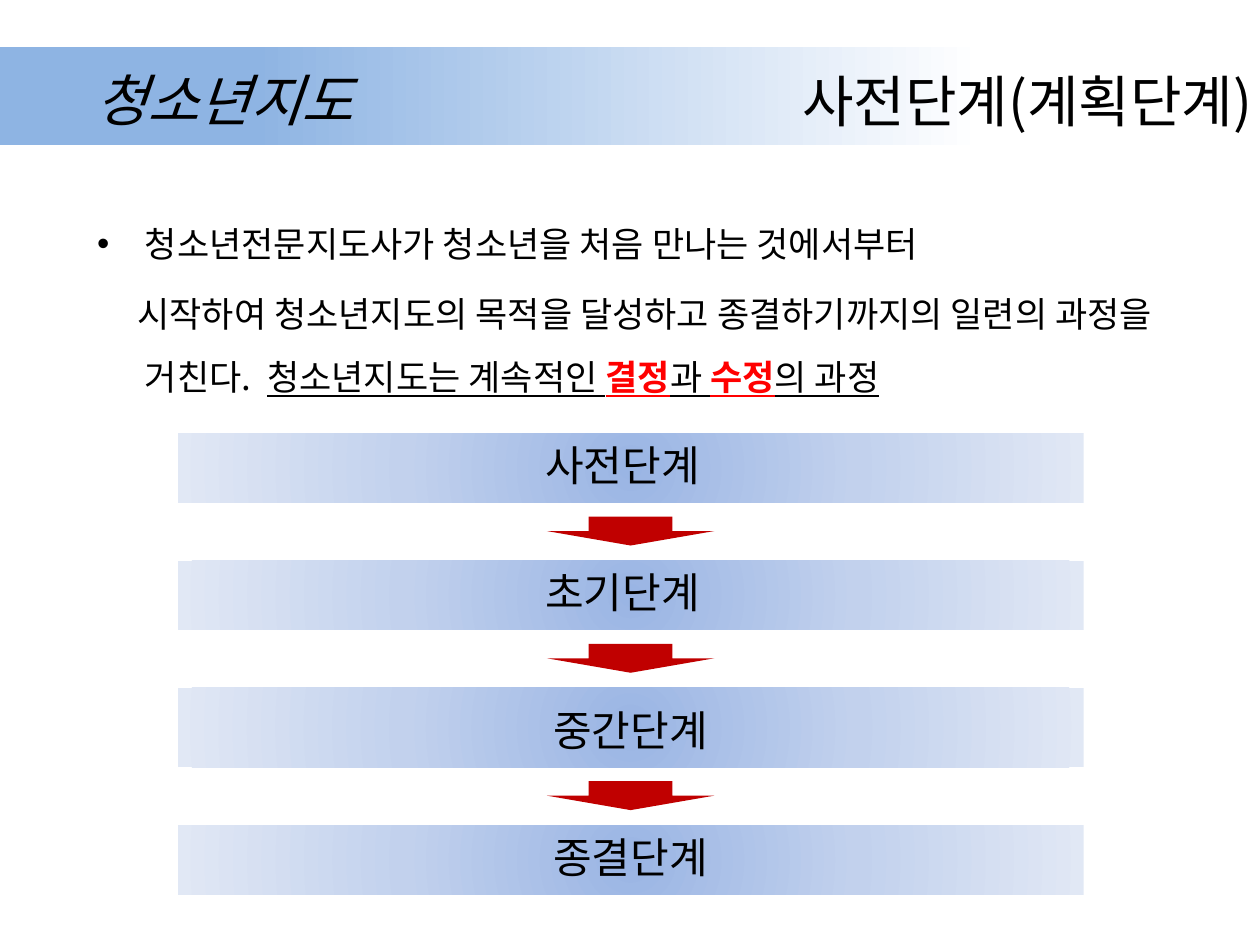
from lxml import etree
from pptx import Presentation
from pptx.dml.color import RGBColor
from pptx.enum import shapes, text
from pptx.oxml import parse_xml
from pptx.oxml.ns import nsdecls, qn
from pptx.util import Inches, Pt

FONT = "Noto Sans CJK KR"
BLACK = RGBColor(0x00, 0x00, 0x00)
RED = RGBColor(0xFF, 0x00, 0x00)
ARROW = RGBColor(0xC0, 0x00, 0x00)
SKY = RGBColor(0x8E, 0xB4, 0xE3)
WHITE = RGBColor(0xFF, 0xFF, 0xFF)
DEEP = RGBColor(0x9A, 0xB5, 0xE4)
MID = RGBColor(0xC2, 0xD1, 0xED)
PALE = RGBColor(0xE1, 0xE8, 0xF5)

LINEAR = '<a:lin ang="0" scaled="0"/>'
RADIAL = ('<a:path path="circle"><a:fillToRect l="50000" t="50000" '
          'r="50000" b="50000"/></a:path>')
LEFT, CENTER, RIGHT = (text.PP_ALIGN.LEFT, text.PP_ALIGN.CENTER,
                       text.PP_ALIGN.RIGHT)
MIDDLE = text.MSO_ANCHOR.MIDDLE

# name, bar height, alignment of the label
STAGES = [("사전단계", 0.55, LEFT), ("초기단계", 0.55, LEFT),
          ("중간단계", 0.63, CENTER), ("종결단계", 0.55, CENTER)]
GAP = 0.46


def add_run(para, words, size, color=BLACK, **style):
    run = para.add_run()
    run.text = words
    font = run.font
    font.name, font.size = FONT, Pt(size)
    font.color.rgb = color
    for key, value in style.items():
        setattr(font, key, value)
    etree.SubElement(font._element, qn("a:ea"), typeface=FONT)
    return run


def add_block(slide, kind, box):
    block = slide.shapes.add_shape(kind, *map(Inches, box))
    block.shadow.inherit = False
    block.line.fill.background()
    return block


def shade(block, stops, course):
    """Fill a block with a gradient of (percent, colour) stops."""
    marks = "".join(f'<a:gs pos="{at * 1000}"><a:srgbClr val="{color}"/></a:gs>'
                    for at, color in stops)
    grad = parse_xml(f'<a:gradFill {nsdecls("a")} rotWithShape="1">'
                     f'<a:gsLst>{marks}</a:gsLst>{course}</a:gradFill>')
    block._element.spPr.find(qn("a:prstGeom")).addnext(grad)


def add_label(slide, words, box, size, align, wrap=False):
    label = slide.shapes.add_textbox(*map(Inches, box))
    frame = label.text_frame
    frame.word_wrap = wrap
    para = frame.paragraphs[0]
    para.alignment = align
    add_run(para, words, size)
    return label


def place(holder, box):
    holder.left, holder.top, holder.width, holder.height = map(Inches, box)
    frame = holder.text_frame
    frame.auto_size = text.MSO_AUTO_SIZE.NONE
    frame.word_wrap = True
    return frame


def set_para(para, indent, bullet):
    para.line_spacing = 1.5
    para.space_before = Pt(4)
    props = para._p.get_or_add_pPr()
    props.set("marL", str(Inches(0.38)))
    props.set("indent", str(Inches(indent)))
    if bullet:
        etree.SubElement(props, qn("a:buFont"), typeface="Arial")
        etree.SubElement(props, qn("a:buChar"), char=bullet)
    else:
        etree.SubElement(props, qn("a:buNone"))


def fill_body(holder):
    frame = place(holder, (0.67, 1.55, 8.66, 1.9))
    first = frame.paragraphs[0]
    set_para(first, -0.38, "•")
    add_run(first, "청소년전문지도사가 청소년을 처음 만나는 것에서부터", 20)
    second = frame.add_paragraph()
    set_para(second, -0.06, None)
    add_run(second, "시작하여 청소년지도의 목적을 달성하고 종결하기까지의 "
                    "일련의 과정을 거친다.", 20)
    space = add_run(second, " ", 20)
    space.font._element.set("spc", "450")
    for words, key in [("청소년지도는 계속적인 ", False), ("결정", True),
                       ("과 ", False), ("수정", True), ("의 과정", False)]:
        add_run(second, words, 20, RED if key else BLACK,
                bold=key, underline=True)


def add_stages(slide):
    top = 3.44
    for i, (name, high, align) in enumerate(STAGES):
        if i:
            arrow = add_block(slide, shapes.MSO_SHAPE.DOWN_ARROW,
                              (4.34, top - GAP + 0.11, 1.33, 0.23))
            arrow.fill.solid()
            arrow.fill.fore_color.rgb = ARROW
        bar = add_block(slide, shapes.MSO_SHAPE.RECTANGLE,
                        (1.41, top, 7.19, high))
        shade(bar, [(0, DEEP), (50, MID), (100, PALE)], RADIAL)
        add_label(slide, name, (4.23, top + high - 0.55, 1.55, 0.5), 24, align)
        top += high + GAP


def add_header(slide):
    band = add_block(slide, shapes.MSO_SHAPE.RECTANGLE, (0, 0.37, 10, 0.78))
    shade(band, [(20, SKY), (78, WHITE)], LINEAR)
    topic = add_label(slide, "사전단계(계획단계)", (1.04, 0.22, 9, 1.25),
                      32, RIGHT, True)
    topic.text_frame.vertical_anchor = MIDDLE
    topic.text_frame.paragraphs[0].line_spacing = 0.8
    title = slide.shapes.title
    frame = place(title, (0.66, 0.44, 2.85, 0.69))
    frame.vertical_anchor = MIDDLE
    frame.paragraphs[0].alignment = LEFT
    add_run(frame.paragraphs[0], "청소년지도", 32, italic=True)
    band._element.getparent().append(title._element)  # in front of the band


def main():
    deck = Presentation()
    deck.slide_width, deck.slide_height = Inches(10), Inches(7.5)
    slide = deck.slides.add_slide(deck.slide_layouts[1])
    fill_body(slide.placeholders[1])
    add_stages(slide)
    add_header(slide)
    deck.save("out.pptx")


if __name__ == "__main__":
    main()
